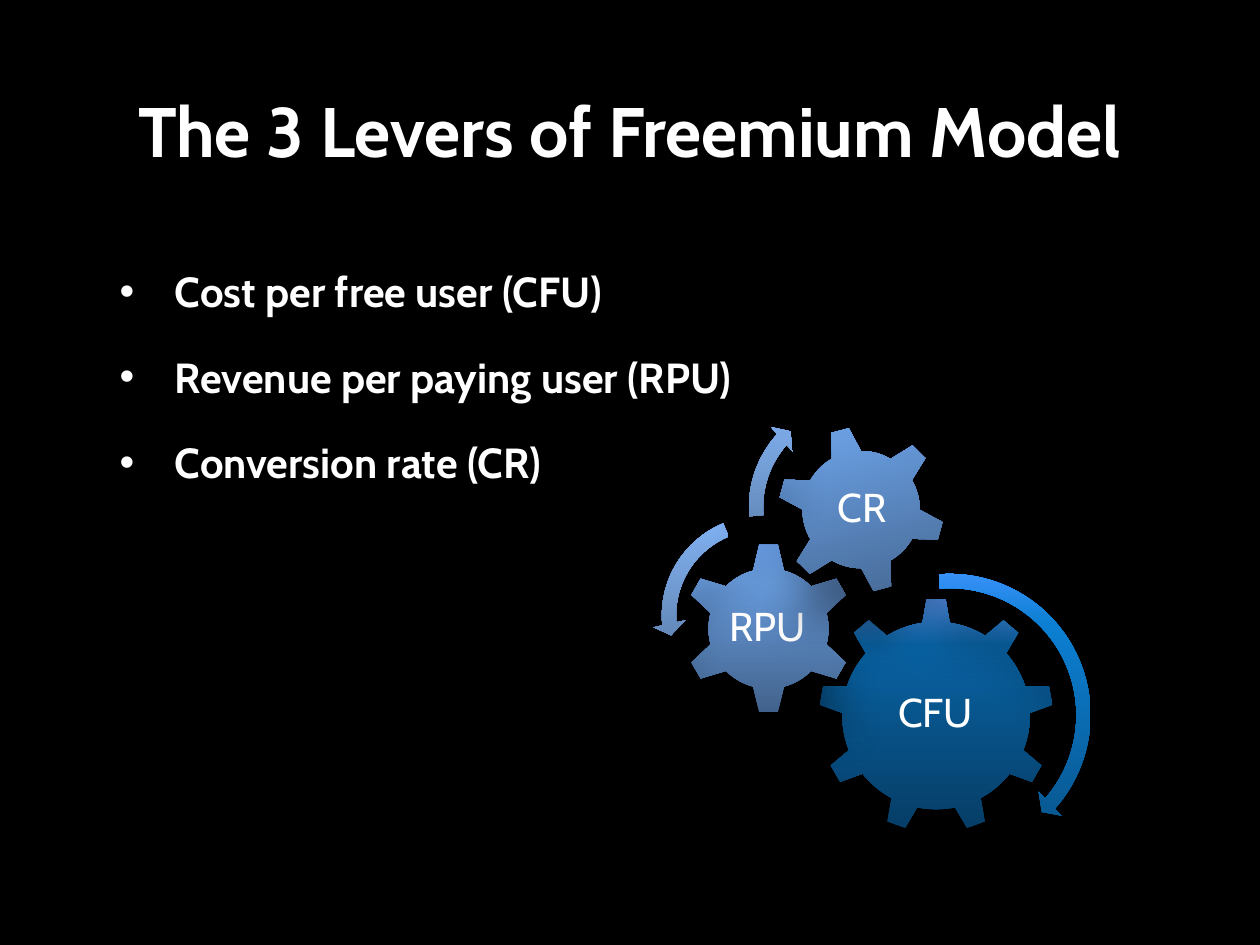
from lxml import etree
from pptx import Presentation
from pptx.dml.color import RGBColor
from pptx.enum.shapes import MSO_SHAPE
from pptx.enum.text import MSO_ANCHOR, PP_ALIGN
from pptx.oxml.ns import qn
from pptx.util import Inches, Pt

FONT = "Cabin"
WHITE = "FFFFFF"
BLUE = [(0, "063D65"), (80, "0962A3"), (100, "487ECB")]
SKY = [(0, "41618A"), (80, "699DDF"), (100, "73ADFF")]
BRIGHT_BLUE = [(0, "074F82"), (80, "0C7FD2"), (100, "3F94FF")]
BRIGHT_SKY = [(0, "4C688D"), (80, "7AA7E3"), (100, "84B7FF")]

# Gear: preset, left, top, size, rotation, colours, text, text box
GEARS = [
    (MSO_SHAPE.GEAR_9, 1.32, 1.66, 1.86, 0, BLUE, "CFU", (1.69, 2.1, 1.11, 0.96)),
    (MSO_SHAPE.GEAR_6, 0.24, 1.22, 1.36, 0, SKY, "RPU", (0.58, 1.56, 0.67, 0.67)),
    (MSO_SHAPE.GEAR_6, 0.99, 0.29, 1.33, 345, SKY, "CR", (1.29, 0.58, 0.75, 0.75)),
]
# Arrow: preset, left, top, size, colours, adjustments
ARROWS = [
    (MSO_SHAPE.CIRCULAR_ARROW, 1.16, 1.39, 2.39, BRIGHT_BLUE,
     (0.047, 2.99, 24.828, 159.352, 0.055)),
    (MSO_SHAPE.LEFT_CIRCULAR_ARROW, 0, 0.93, 1.73, BRIGHT_SKY,
     (0.065, 4.3, 104.891, 148.378, 0.075)),
    (MSO_SHAPE.CIRCULAR_ARROW, 0.69, 0, 1.87, BRIGHT_SKY,
     (0.06, 3.941, 133.138, 105.082, 0.07)),
]


def color(value):
    return RGBColor.from_string(value)


def apply(target, **values):
    for name, value in values.items():
        setattr(target, name, value)


def add_text(p, text, size, bold=False):
    r = p.add_run()
    r.text = text
    apply(r.font, name=FONT, size=Pt(size), bold=bold)
    r.font.color.rgb = color(WHITE)


def add_color(parent, value):
    return etree.SubElement(parent, qn("a:srgbClr"), val=value)


def style_shape(sp, stops):
    # Gradient from bottom to top
    sp.fill.gradient()
    sp.fill.gradient_angle = 90
    sp.line.fill.background()
    sp_pr = sp._element.spPr
    stop_list = sp_pr.find(".//" + qn("a:gsLst"))
    for stop in list(stop_list):
        stop_list.remove(stop)
    for pos, value in stops:
        add_color(etree.SubElement(stop_list, qn("a:gs"), pos=str(pos * 1000)), value)

    # Soft shadow straight below
    sp.shadow.inherit = False
    shadow = etree.SubElement(
        sp_pr.find(qn("a:effectLst")), qn("a:outerShdw"), blurRad=str(Pt(25)),
        dist=str(Pt(30)), dir="5400000", rotWithShape="0")
    etree.SubElement(add_color(shadow, "000000"), qn("a:alpha"), val="40000")


def add_title(s, left, top, width, height):
    title = s.shapes.title
    apply(title, left=Inches(left), top=Inches(top),
          width=Inches(width), height=Inches(height))
    tf = title.text_frame
    apply(tf, word_wrap=True, vertical_anchor=MSO_ANCHOR.MIDDLE)
    p = tf.paragraphs[0]
    p.alignment = PP_ALIGN.CENTER
    add_text(p, "The 3 Levers of Freemium Model", 40, True)


def add_bullets(s, left, top, width, height, items):
    box = s.shapes.add_textbox(*map(Inches, (left, top, width, height)))
    tf = box.text_frame
    tf.word_wrap = True
    for i, item in enumerate(items):
        p = tf.add_paragraph() if i else tf.paragraphs[0]
        p_pr = p._p.get_or_add_pPr()
        p_pr.set("marL", str(Inches(0.44)))
        p_pr.set("indent", str(Inches(-0.44)))
        etree.SubElement(p_pr, qn("a:buFont"), typeface="Arial")
        etree.SubElement(p_pr, qn("a:buChar"), char="•")
        p.space_before = Pt(20 if i else 0)
        add_text(p, item, 24, True)


def add_gears(s, left, top):
    shapes = s.shapes.add_group_shape().shapes

    def place(x, y, w, h):
        return map(Inches, (left + x, top + y, w, h))

    # Gears with their labels
    for preset, x, y, size, rotation, stops, text, label_box in GEARS:
        gear = shapes.add_shape(preset, *place(x, y, size, size))
        gear.rotation = rotation
        style_shape(gear, stops)
        tf = shapes.add_textbox(*place(*label_box)).text_frame
        margin = Inches(0.03)
        apply(tf, word_wrap=False, vertical_anchor=MSO_ANCHOR.MIDDLE,
              margin_left=margin, margin_right=margin,
              margin_top=margin, margin_bottom=margin)
        p = tf.paragraphs[0]
        apply(p, alignment=PP_ALIGN.CENTER, line_spacing=0.9)
        add_text(p, text, 23)

    # Turning arrows
    for preset, x, y, size, stops, adjustments in ARROWS:
        arrow = shapes.add_shape(preset, *place(x, y, size, size))
        for i, value in enumerate(adjustments):
            arrow.adjustments[i] = value
        style_shape(arrow, stops)


def main():
    prs = Presentation()
    apply(prs, slide_width=Inches(10), slide_height=Inches(7.5))
    s = prs.slides.add_slide(prs.slide_layouts[5])
    s.background.fill.solid()
    s.background.fill.fore_color.rgb = color("000000")
    add_title(s, 0.85, 0.12, 8.29, 1.81)
    add_bullets(s, 0.85, 2.06, 8.29, 4.32, [
        "Cost per free user (CFU)",
        "Revenue per paying user (RPU)",
        "Conversion rate (CR)",
    ])
    add_gears(s, 5.18, 3.09)
    prs.save("out.pptx")


if __name__ == "__main__":
    main()
